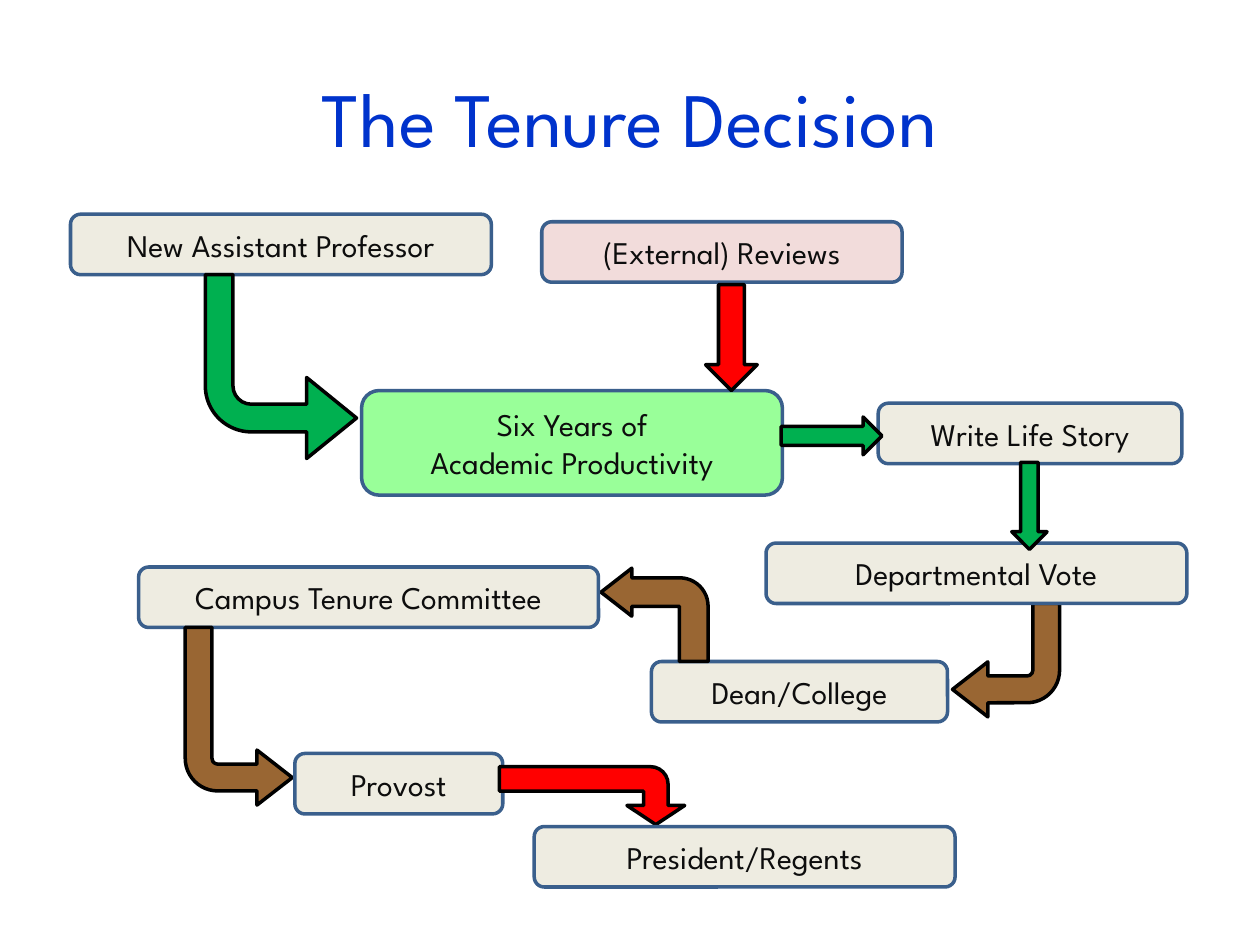
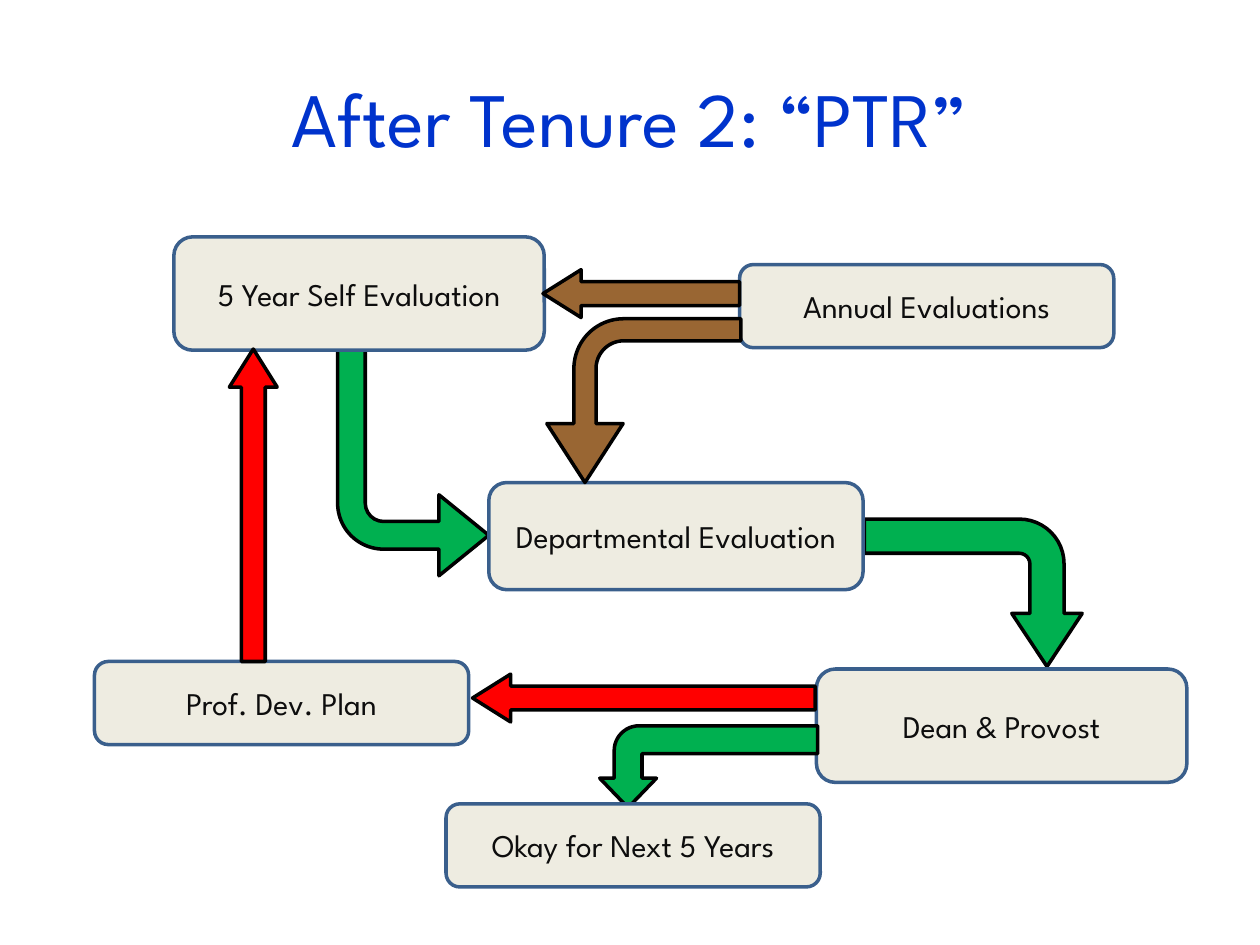
import pptx
import pptx.util
import pptx.dml.color
import pptx.enum.shapes
import pptx.enum.text

Inches = pptx.util.Inches
Pt = pptx.util.Pt
SHAPES = pptx.enum.shapes.MSO_SHAPE
CENTER = pptx.enum.text.PP_ALIGN.CENTER
MIDDLE = pptx.enum.text.MSO_ANCHOR.MIDDLE

FONT = "League Spartan"
TITLE_BLUE, TEXT, OUTLINE, BLACK = "0033CC", "0D0D0D", "3A5F8C", "000000"
BEIGE, PINK, LIGHT_GREEN = "EEECE1", "F2DCDB", "99FF99"
GREEN, RED, BROWN = "00B050", "FF0000", "996633"

STEP_HEIGHT = 0.48             # one-line boxes of the tenure chart
REVIEW_SIZE = (2.97, 0.66)     # small boxes of the review chart
PERSON_SIZE = (2.94, 0.9)      # large boxes of the review chart
BEND = 0.304                   # corner radius of every bent arrow
BLOCK_HEAD = (0.5, 0.796)      # shaft and head of the long straight arrows


def color(hex_value):
    return pptx.dml.color.RGBColor.from_string(hex_value)


def format_text(text_frame, size, hex_value):
    text_frame.word_wrap = True
    text_frame.vertical_anchor = MIDDLE
    for paragraph in text_frame.paragraphs:
        paragraph.alignment = CENTER
        for run in paragraph.runs:
            run.font.name = FONT
            run.font.size = Pt(size)
            run.font.color.rgb = color(hex_value)


def add_titled_slide(presentation, title_text):
    slide = presentation.slides.add_slide(presentation.slide_layouts[5])
    title = slide.shapes.title
    title.left, title.top = Inches(0.5), Inches(0.3)
    title.width, title.height = Inches(9), Inches(1.25)
    title.text_frame.text = title_text
    format_text(title.text_frame, 44, TITLE_BLUE)
    return slide


def add_outlined(slide, kind, left, top, width, height, fill, line):
    shape = slide.shapes.add_shape(
        kind, Inches(left), Inches(top), Inches(width), Inches(height))
    shape.shadow.inherit = False
    shape.fill.solid()
    shape.fill.fore_color.rgb = color(fill)
    shape.line.color.rgb = color(line)
    shape.line.width = Pt(2)
    return shape


def add_box(slide, text, left, top, width, height=STEP_HEIGHT, fill=BEIGE):
    shape = add_outlined(slide, SHAPES.ROUNDED_RECTANGLE,
                         left, top, width, height, fill, OUTLINE)
    shape.text_frame.text = text
    format_text(shape.text_frame, 18, TEXT)


def add_arrow(slide, kind, left, top, width, height, fill,
              adjustments=(), rotation=0, flip=""):
    shape = add_outlined(slide, kind, left, top, width, height, fill, BLACK)
    for index, value in enumerate(adjustments):
        shape.adjustments[index] = value
    shape.rotation = rotation
    for axis in flip:
        shape._element.spPr.xfrm.set("flip" + axis, "1")


def add_bent_arrow(slide, left, top, width, height, fill, shaft, head,
                   length=0.33, rotation=0, flip="V"):
    add_arrow(slide, SHAPES.BENT_ARROW, left, top, width, height, fill,
              (shaft, head, length, BEND), rotation, flip)


def build_tenure_decision(presentation):
    slide = add_titled_slide(presentation, "The Tenure Decision")

    # Years before the review
    add_box(slide, "New Assistant Professor", 0.56, 1.7, 3.34)
    add_box(slide, "Six Years of\vAcademic Productivity",
            2.87, 3.1, 3.34, 0.83, LIGHT_GREEN)
    add_bent_arrow(slide, 1.63, 2.18, 1.2, 1.46, GREEN, 0.183, 0.268)
    add_box(slide, "(External) Reviews", 4.3, 1.76, 2.86, fill=PINK)
    add_arrow(slide, SHAPES.DOWN_ARROW, 5.6, 2.26, 0.41, 0.84, RED)

    # College and campus
    add_bent_arrow(slide, 7.56, 4.79, 0.85, 0.9, BROWN, 0.25, 0.257, flip="HV")
    add_box(slide, "Dean/College", 5.17, 5.25, 2.35)
    add_bent_arrow(slide, 4.77, 4.51, 0.85, 0.74, BROWN, 0.307, 0.257, flip="H")
    add_box(slide, "Campus Tenure Committee", 1.1, 4.5, 3.65)

    # Final approval
    add_bent_arrow(slide, 1.47, 4.98, 0.85, 1.41, BROWN, 0.25, 0.257)
    add_box(slide, "Provost", 2.34, 5.98, 1.65)
    add_bent_arrow(slide, 4.47, 5.58, 0.46, 1.47, RED, 0.424, 0.499,
                   rotation=270, flip="HV")
    add_box(slide, "President/Regents", 4.24, 6.56, 3.34)

    # Life story and department
    add_box(slide, "Write Life Story", 6.97, 3.2, 2.41)
    add_arrow(slide, SHAPES.RIGHT_ARROW, 6.2, 3.31, 0.8, 0.3, GREEN)
    add_box(slide, "Departmental Vote", 6.08, 4.31, 3.34)
    add_arrow(slide, SHAPES.DOWN_ARROW, 8.03, 3.67, 0.28, 0.69, GREEN)


def build_post_tenure_review(presentation):
    slide = add_titled_slide(presentation, "After Tenure 2: “PTR”")

    # Main path, with its arrows tucked behind the boxes
    add_bent_arrow(slide, 2.68, 2.78, 1.2, 1.79, GREEN, 0.183, 0.268)
    add_bent_arrow(slide, 7.14, 3.84, 1.17, 1.73, GREEN, 0.232, 0.239,
                   0.36, 270, "HV")
    add_box(slide, "Departmental Evaluation", 3.88, 3.83, 2.97, 0.85)
    add_box(slide, "5 Year Self Evaluation", 1.38, 1.88, *PERSON_SIZE)
    add_box(slide, "Dean & Provost", 6.48, 5.31, *PERSON_SIZE)

    # Outcomes
    add_arrow(slide, SHAPES.LEFT_ARROW, 3.75, 5.35, 2.72, 0.38, RED, BLOCK_HEAD)
    add_bent_arrow(slide, 5.3, 5.22, 0.65, 1.73, GREEN, 0.34, 0.347, 0.36, 90)
    add_box(slide, "Okay for Next 5 Years", 3.54, 6.38, *REVIEW_SIZE)

    # Annual evaluations feed both evaluations
    add_box(slide, "Annual Evaluations", 5.87, 2.1, *REVIEW_SIZE)
    add_arrow(slide, SHAPES.LEFT_ARROW, 4.31, 2.14, 1.56, 0.38, BROWN, BLOCK_HEAD)
    add_bent_arrow(slide, 4.46, 2.41, 1.3, 1.54, BROWN, 0.135, 0.233, 0.36, 90)

    # Development plan leads back to the start
    add_box(slide, "Prof. Dev. Plan", 0.75, 5.25, *REVIEW_SIZE)
    add_arrow(slide, SHAPES.LEFT_ARROW, 0.77, 3.82, 2.48, 0.38, RED,
              BLOCK_HEAD, rotation=90)


def main():
    presentation = pptx.Presentation()
    presentation.slide_width, presentation.slide_height = Inches(10), Inches(7.5)
    build_tenure_decision(presentation)
    build_post_tenure_review(presentation)
    presentation.save("out.pptx")


if __name__ == "__main__":
    main()
